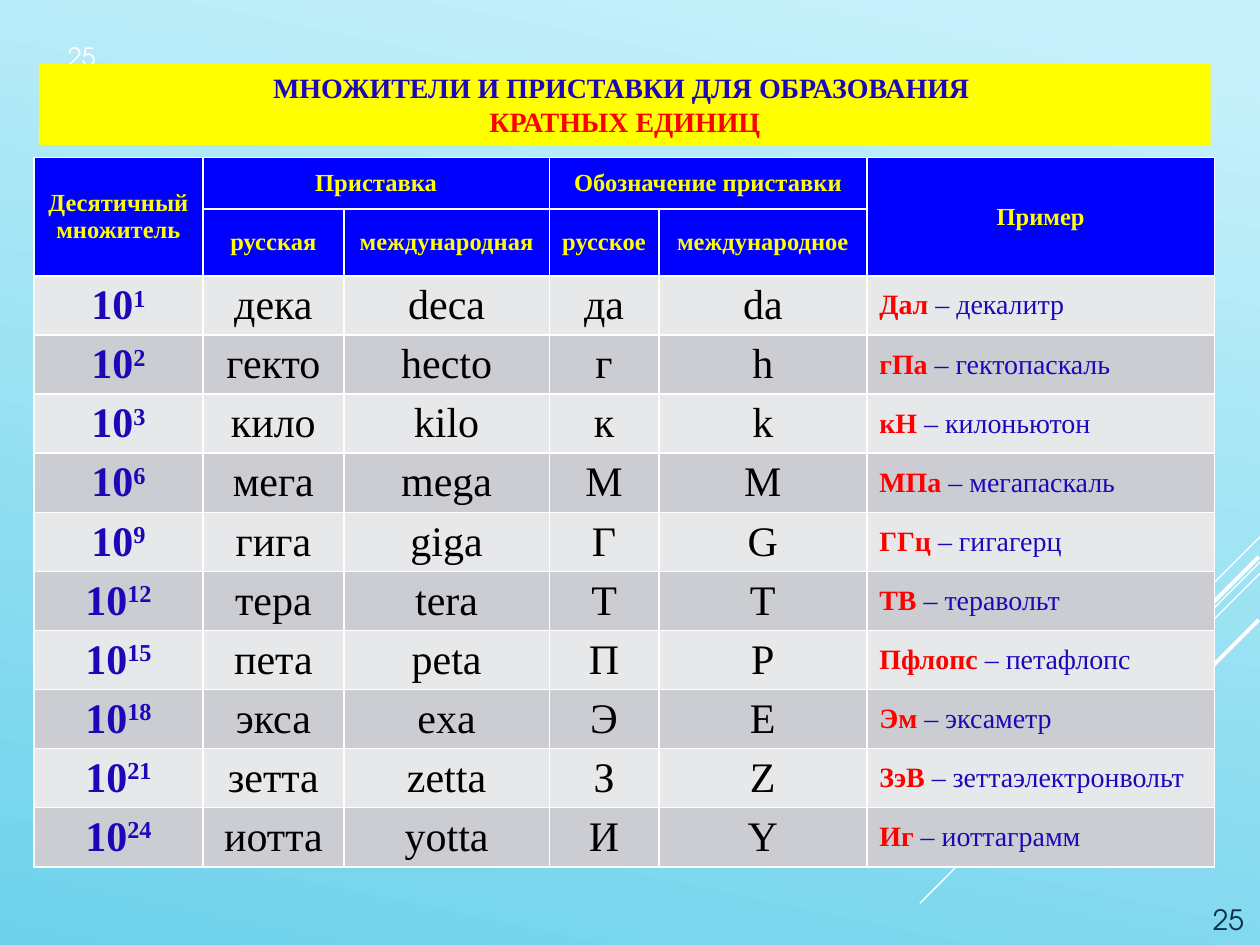
from lxml.etree import SubElement
from pptx import Presentation
from pptx.dml.color import RGBColor
from pptx.enum.shapes import MSO_CONNECTOR, MSO_SHAPE
from pptx.enum.text import MSO_ANCHOR, PP_ALIGN
from pptx.oxml.ns import qn
from pptx.util import Inches, Pt

SLIDE_W, SLIDE_H = Inches(10), Inches(7.5)
UNIT = SLIDE_W / 100  # square grid: 100 columns by 75 rows

COLORS = {
    "sky_light": "C8F1FB", "sky_deep": "6ED2EB", "white": "FFFFFF",
    "header": "0000FF", "yellow": "FFFF00", "indigo": "1D08B8", "red": "FF0000",
    "black": "000000", "row_light": "E7E8EA", "row_dark": "CCCDD2", "navy": "0A304A",
}
SERIF, SANS = "Times New Roman", "TeX Gyre Adventor"

STREAKS = [  # right end, left end, width in points
    ((100, 42.6), (91.7, 50.9), 0.75),
    ((100, 44.6), (73, 71.7), 0.75),
    ((100, 45.5), (82.8, 62.7), 0.75),
    ((99.9, 44.2), (84.2, 59.9), 2.25),
    ((99.9, 49.2), (88.5, 60.6), 2.25),
]
COLUMN_SPANS = [13.4, 11.2, 16.3, 8.7, 16.5, 27.6]
HEADERS = [  # row, column, last row, last column, label
    (0, 0, 1, 0, "Десятичный множитель"),
    (0, 1, 0, 2, "Приставка"),
    (0, 3, 0, 4, "Обозначение приставки"),
    (0, 5, 1, 5, "Пример"),
    (1, 1, 1, 1, "русская"),
    (1, 2, 1, 2, "международная"),
    (1, 3, 1, 3, "русское"),
    (1, 4, 1, 4, "международное"),
]
PREFIXES = [  # exponent, prefix (ru, int.), symbol (ru, int.), unit, its name
    ("1", "дека", "deca", "да", "da", "Дал", "декалитр"),
    ("2", "гекто", "hecto", "г", "h", "гПа", "гектопаскаль"),
    ("3", "кило", "kilo", "к", "k", "кН", "килоньютон"),
    ("6", "мега", "mega", "М", "M", "МПа", "мегапаскаль"),
    ("9", "гига", "giga", "Г", "G", "ГГц", "гигагерц"),
    ("12", "тера", "tera", "Т", "T", "ТВ", "теравольт"),
    ("15", "пета", "peta", "П", "P", "Пфлопс", "петафлопс"),
    ("18", "экса", "exa", "Э", "E", "Эм", "эксаметр"),
    ("21", "зетта", "zetta", "З", "Z", "ЗэВ", "зеттаэлектронвольт"),
    ("24", "иотта", "yotta", "И", "Y", "Иг", "иоттаграмм"),
]


def grid(*spans):
    return [round(span * UNIT) for span in spans]


def rgb(name):
    return RGBColor.from_string(COLORS[name])


def paint(target, color):
    target.fill.solid()
    target.fill.fore_color.rgb = rgb(color)


def write(paragraph, text, *, size, color, font=SERIF, bold=False,
          align=PP_ALIGN.CENTER, superscript=False):
    """Append one formatted run to the paragraph."""
    paragraph.alignment = align
    run = paragraph.add_run()
    run.text = text
    run.font.size, run.font.name, run.font.bold = Pt(size), font, bold
    run.font.color.rgb = rgb(color)
    if superscript:
        run._r.get_or_add_rPr().set("baseline", "30000")


def add_background(slide):
    fill = slide.background.fill
    fill.gradient()
    fill.gradient_angle = 258
    for stop, color, position in zip(
            fill.gradient_stops, ("sky_light", "sky_deep"), (0.04, 1)):
        stop.color.rgb = rgb(color)
        stop.position = position


def add_streaks(slide):
    group = slide.shapes.add_group_shape()
    for start, end, width in STREAKS:
        streak = group.shapes.add_connector(
            MSO_CONNECTOR.STRAIGHT, *grid(*start, *end))
        streak.line.color.rgb = rgb("white")
        streak.line.width = Pt(width)
        SubElement(streak._element.spPr, qn("a:effectLst"))


def add_prefix_table(slide, box):
    row_count = 2 + len(PREFIXES)
    table = slide.shapes.add_table(
        row_count, len(COLUMN_SPANS), *grid(*box)).table
    for column, width in zip(table.columns, grid(*COLUMN_SPANS)):
        column.width = width
    for index, row in enumerate(table.rows):
        row.height = grid(4.1)[0]
        band = "header" if index < 2 else ("row_light", "row_dark")[index % 2]
        for cell in row.cells:
            paint(cell, band)
            cell.vertical_anchor = MSO_ANCHOR.MIDDLE

    for top, left, bottom, right, label in HEADERS:
        cell = table.cell(top, left)
        if (top, left) != (bottom, right):
            cell.merge(table.cell(bottom, right))
        write(cell.text_frame.paragraphs[0], label, size=14, color="yellow", bold=True)

    for row, (exponent, *names, unit, unit_name) in enumerate(PREFIXES, start=2):
        factor, *middle, example = [
            cell.text_frame.paragraphs[0] for cell in table.rows[row].cells]
        write(factor, "10", size=24, color="indigo", bold=True)
        write(factor, exponent, size=24, color="indigo", bold=True, superscript=True)
        for paragraph, name in zip(middle, names):
            write(paragraph, name, size=24, color="black")
        write(example, f"{unit} ", size=16, color="red", bold=True, align=PP_ALIGN.LEFT)
        write(example, f"– {unit_name}", size=16, color="indigo", align=PP_ALIGN.LEFT)


def add_page_number(slide, box, anchor, **text_format):
    frame = slide.shapes.add_textbox(*grid(*box)).text_frame
    frame.word_wrap = True
    frame.vertical_anchor = anchor
    write(frame.paragraphs[0], "25", font=SANS, **text_format)


def add_heading(slide, box):
    banner = slide.shapes.add_shape(MSO_SHAPE.RECTANGLE, *grid(*box))
    banner.shadow.inherit = False
    paint(banner, "yellow")
    banner.line.fill.background()
    frame = banner.text_frame
    frame.word_wrap = True
    frame.vertical_anchor = MSO_ANCHOR.MIDDLE
    write(frame.paragraphs[0], "МНОЖИТЕЛИ И ПРИСТАВКИ ДЛЯ ОБРАЗОВАНИЯ ",
          size=16, color="indigo", bold=True)
    write(frame.add_paragraph(), "КРАТНЫХ ЕДИНИЦ", size=16, color="red", bold=True)


def main():
    presentation = Presentation()
    presentation.slide_width, presentation.slide_height = SLIDE_W, SLIDE_H
    slide = presentation.slides.add_slide(presentation.slide_layouts[6])
    add_background(slide)
    add_streaks(slide)
    add_prefix_table(slide, (2.7, 12.5, 93.8, 58.1))
    add_page_number(slide, (90.3, 67.5, 9.4, 7.3), MSO_ANCHOR.BOTTOM,
                    size=16, color="navy", align=PP_ALIGN.RIGHT)
    add_page_number(slide, (4.4, 2.8, 90, 3.4), MSO_ANCHOR.MIDDLE,
                    size=14.4, color="white", align=PP_ALIGN.LEFT)
    add_heading(slide, (3.1, 5.1, 93, 6.4))
    presentation.save("out.pptx")


if __name__ == "__main__":
    main()
